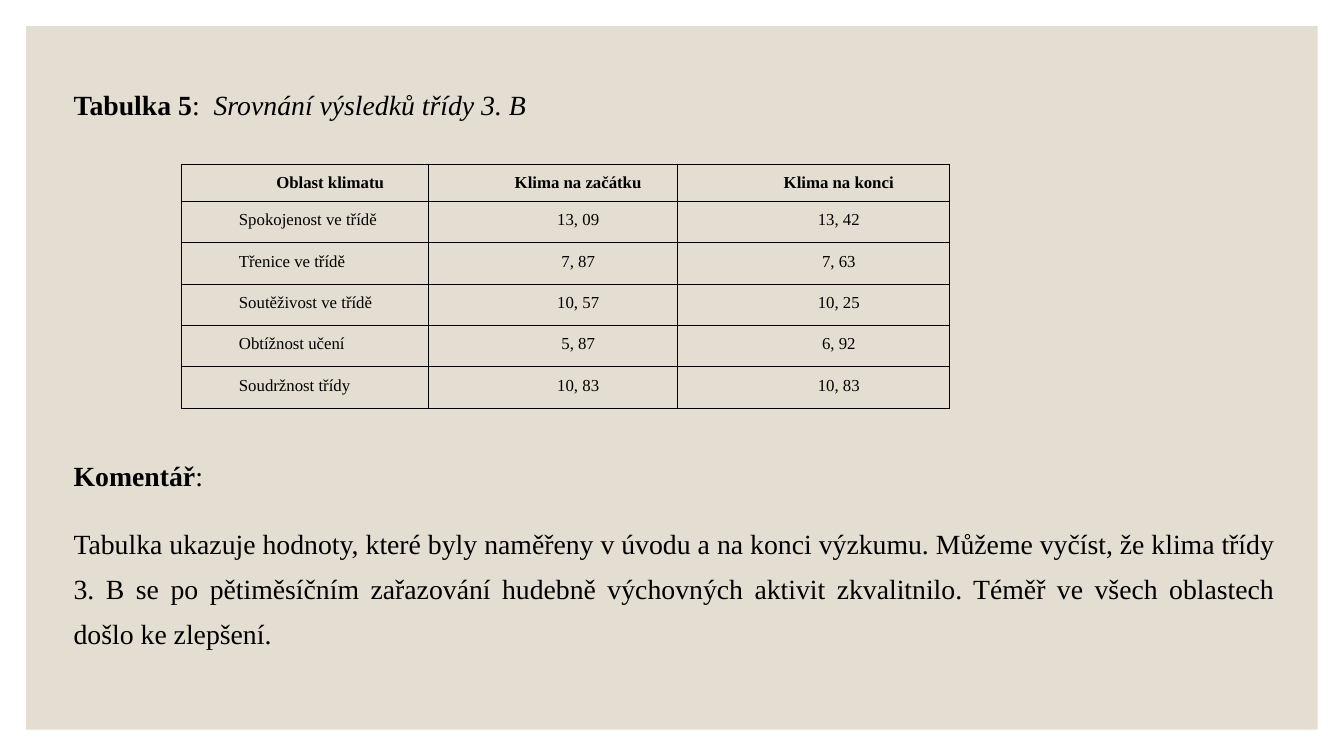
from lxml import etree
from pptx import Presentation
from pptx.dml.color import RGBColor
from pptx.enum.shapes import MSO_SHAPE
from pptx.enum.text import PP_ALIGN
from pptx.oxml.ns import qn
from pptx.util import Inches, Pt

RECT = MSO_SHAPE.RECTANGLE
LEFT, CENTER, JUSTIFY = PP_ALIGN.LEFT, PP_ALIGN.CENTER, PP_ALIGN.JUSTIFY

FONT, BLACK, SAND = "Times New Roman", "000000", "E3DED1"
WIDE, HIGH = 13.33, 7.5
EDGE = 0.26
TEXT_X, TEXT_W = 0.73, 11.91
SIZE, CELL_SIZE = 19.8, 12

# Each run is (text, bold, italic)
TITLE = [("Tabulka 5", True, False), (":  ", False, False),
         ("Srovnání výsledků třídy 3. B", False, True)]
NOTE = [("Komentář", True, False), (":", False, False)]
BODY = [("Tabulka ukazuje hodnoty, které byly naměřeny v úvodu a na konci výzkumu. "
         "Můžeme vyčíst, že klima třídy 3. B se po pětiměsíčním zařazování hudebně "
         "výchovných aktivit zkvalitnilo. Téměř ve všech oblastech došlo ke zlepšení.",
         False, False)]
ROWS = [
    ("Oblast klimatu", "Klima na začátku", "Klima na konci"),
    ("Spokojenost ve třídě", "13, 09", "13, 42"),
    ("Třenice ve třídě", "7, 87", "7, 63"),
    ("Soutěživost ve třídě", "10, 57", "10, 25"),
    ("Obtížnost učení", "5, 87", "6, 92"),
    ("Soudržnost třídy", "10, 83", "10, 83"),
]
COLS = (2.45, 2.47, 2.7)
HEAD_H, ROW_H = 0.37, 0.41


def color(code):
    return RGBColor.from_string(code)


def style(font, size, bold, italic=False):
    font.name, font.size = FONT, Pt(size)
    font.bold, font.italic = bold, italic
    font.color.rgb = color(BLACK)


def add_text(slide, top, high, paras, align, pitch):
    box = slide.shapes.add_textbox(Inches(TEXT_X), Inches(top),
                                   Inches(TEXT_W), Inches(high))
    frame = box.text_frame
    frame.word_wrap = True
    frame.margin_left = frame.margin_right = 0
    frame.margin_top = frame.margin_bottom = 0
    for i, runs in enumerate(paras):
        para = frame.add_paragraph() if i else frame.paragraphs[0]
        para.alignment, para.line_spacing = align, pitch
        para.space_before, para.space_after = Pt(10 if i else 0), Pt(6)
        for text, bold, italic in runs:
            run = para.add_run()
            run.text = text
            style(run.font, SIZE, bold, italic)


def add_border(cell):
    props = cell._tc.get_or_add_tcPr()
    for side in ("lnL", "lnR", "lnT", "lnB"):
        line = etree.SubElement(props, qn("a:" + side), w=str(Pt(1)))
        fill = etree.SubElement(line, qn("a:solidFill"))
        etree.SubElement(fill, qn("a:srgbClr"), val=BLACK)


def fill_cell(cell, text, row, col):
    add_border(cell)
    cell.fill.background()
    cell.margin_left = cell.margin_right = Inches(0.07)
    cell.margin_top = cell.margin_bottom = 0
    cell.text_frame.text = text
    para = cell.text_frame.paragraphs[0]
    para._p.get_or_add_pPr().set("marL", str(Inches(0.5)))
    para.alignment = LEFT if row and not col else CENTER
    para.line_spacing = 1.5
    if col == len(COLS) - 1:
        para.space_after = Pt(6)
    style(para.runs[0].font, CELL_SIZE, row == 0)


def add_grid(slide):
    high = HEAD_H + ROW_H * (len(ROWS) - 1)
    grid = slide.shapes.add_table(len(ROWS), len(COLS), Inches(1.8), Inches(1.63),
                                  Inches(sum(COLS)), Inches(high)).table
    grid.horz_banding = False
    for col, wide in enumerate(COLS):
        grid.columns[col].width = Inches(wide)
    for row, texts in enumerate(ROWS):
        grid.rows[row].height = Inches(ROW_H if row else HEAD_H)
        for col, text in enumerate(texts):
            fill_cell(grid.cell(row, col), text, row, col)


def main():
    deck = Presentation()
    deck.slide_width, deck.slide_height = Inches(WIDE), Inches(HIGH)
    slide = deck.slides.add_slide(deck.slide_layouts[6])
    panel = slide.shapes.add_shape(RECT, Inches(EDGE), Inches(EDGE),
                                   Inches(WIDE - 2 * EDGE), Inches(HIGH - 2 * EDGE))
    panel.shadow.inherit = False
    panel.fill.solid()
    panel.fill.fore_color.rgb = color(SAND)
    panel.line.fill.background()
    add_text(slide, 0.87, 0.4, [TITLE], LEFT, 1)
    add_grid(slide)
    add_text(slide, 4.44, 2.3, [NOTE, BODY], JUSTIFY, 1.35)
    deck.save("out.pptx")


if __name__ == "__main__":
    main()
